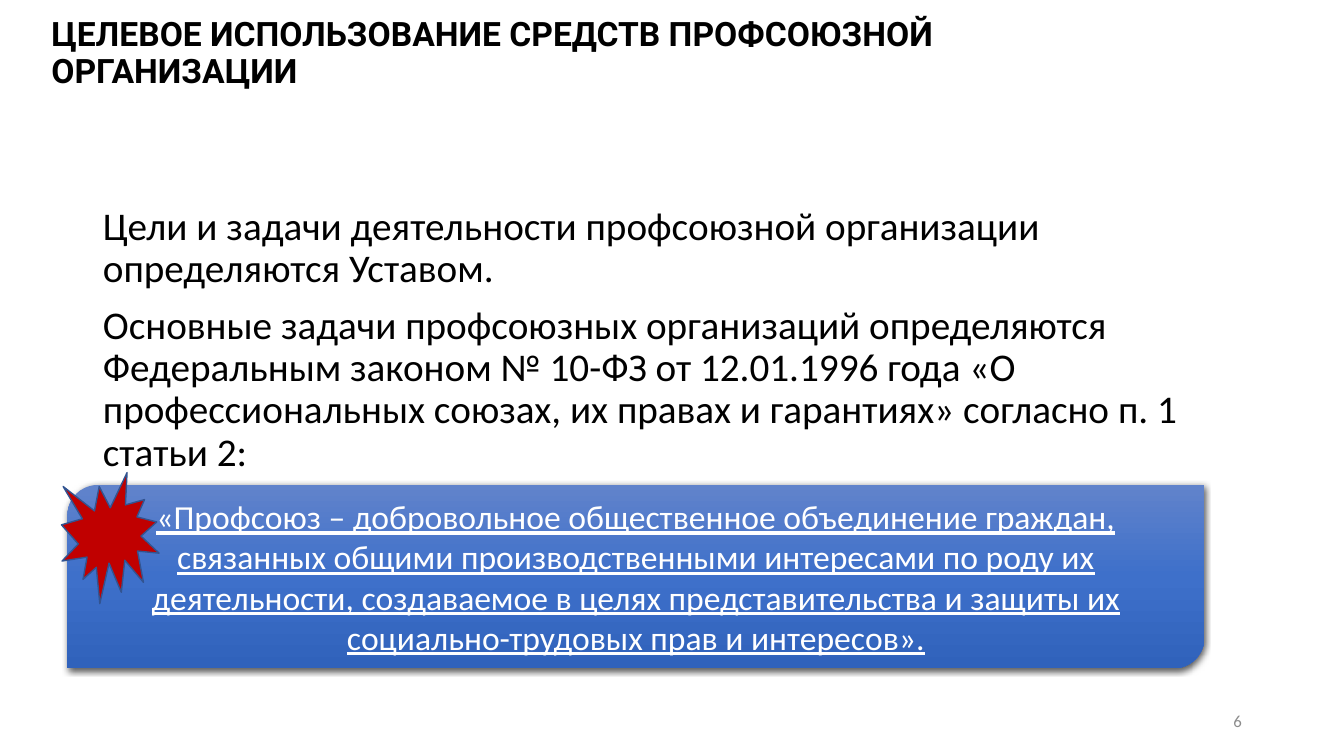
from lxml import etree
from pptx import Presentation
from pptx.dml.color import RGBColor
from pptx.enum.shapes import MSO_SHAPE as Preset
from pptx.enum.text import MSO_ANCHOR as Anchor, MSO_AUTO_SIZE as AutoSize, PP_ALIGN as Align
from pptx.oxml import parse_xml
from pptx.oxml.ns import nsdecls, qn
from pptx.util import Cm, Pt


def color(value):
    return RGBColor.from_string(value)


def write(shape, *texts, size, font="Calibri", ink="000000", bold=False, underline=False,
          align=Align.LEFT, anchor=Anchor.MIDDLE, spacing=1.0, before=0):
    frame = shape.text_frame
    frame.word_wrap = True
    frame.auto_size = AutoSize.NONE
    frame.vertical_anchor = anchor
    for index, text in enumerate(texts):
        paragraph = frame.paragraphs[0] if index == 0 else frame.add_paragraph()
        paragraph.alignment = align
        paragraph.line_spacing = spacing
        paragraph.space_before = Pt(before if index else 0)
        run = paragraph.add_run()
        run.text = text
        run.font.size = Pt(size)
        run.font.name = font
        run.font.bold = bold
        run.font.underline = underline
        run.font.color.rgb = color(ink)


presentation = Presentation()
presentation.slide_width, presentation.slide_height = Cm(33.87), Cm(19.05)
slide = presentation.slides.add_slide(presentation.slide_layouts[1])
title, body = slide.placeholders

# Title
title.left, title.top, title.width, title.height = Cm(1.04), Cm(0.51), Cm(24.54), Cm(1.7)
write(title, "ЦЕЛЕВОЕ ИСПОЛЬЗОВАНИЕ СРЕДСТВ ПРОФСОЮЗНОЙ ОРГАНИЗАЦИИ",
      size=24, font="Roboto", bold=True, spacing=0.9)

# Body text without bullets
body.left, body.top, body.width, body.height = Cm(2.34), Cm(5.08), Cm(29.21), Cm(12.09)
write(body,
      "Цели и задачи деятельности профсоюзной организации определяются Уставом.",
      "Основные задачи профсоюзных организаций определяются Федеральным законом "
      "№ 10-ФЗ от 12.01.1996 года «О профессиональных союзах, их правах и гарантиях» "
      "согласно п. 1 статьи 2:",
      size=28, anchor=Anchor.TOP, spacing=0.9, before=10)
for paragraph in body.text_frame.paragraphs:
    properties = paragraph._p.get_or_add_pPr()
    properties.set("marL", "0")
    properties.set("indent", "0")
    etree.SubElement(properties, qn("a:buNone"))

# Quotation panel with a vertical gradient
panel = slide.shapes.add_shape(Preset.ROUND_2_DIAG_RECTANGLE,
                               Cm(1.7), Cm(12.22), Cm(28.65), Cm(4.62))
panel.shadow.inherit = False
panel.line.fill.background()
panel.fill.gradient()
panel.fill.gradient_angle = 270
stops = panel._element.spPr.find(qn("a:gradFill")).find(qn("a:gsLst"))
for stop in list(stops):
    stops.remove(stop)
for position, value in ((0, "6183CB"), (50, "3E70CA"), (100, "3062BB")):
    stop = etree.SubElement(stops, qn("a:gs"), pos=str(position * 1000))
    etree.SubElement(stop, qn("a:srgbClr"), val=value)
write(panel, "«Профсоюз – добровольное общественное объединение граждан, связанных общими "
      "производственными интересами по роду их деятельности, создаваемое в целях "
      "представительства и защиты их социально-трудовых прав и интересов».",
      size=24, ink="FFFFFF", underline=True, align=Align.CENTER)

# Soft shadows under the title letters and the panel
title_format = title.text_frame.paragraphs[0].runs[0].font._element
title_effects = parse_xml(f"<a:effectLst {nsdecls('a')}/>")
title_format.find(qn("a:solidFill")).addnext(title_effects)
panel_effects = panel._element.spPr.find(qn("a:effectLst"))
for effects, blur, distance, opacity in ((title_effects, 3, 3, 43), (panel_effects, 4.5, 1.5, 63)):
    effects.append(parse_xml(
        f'<a:outerShdw {nsdecls("a")} blurRad="{Pt(blur)}" dist="{Pt(distance)}" dir="5400000" '
        f'algn="ctr" rotWithShape="0"><a:srgbClr val="000000">'
        f'<a:alpha val="{opacity * 1000}"/></a:srgbClr></a:outerShdw>'))

# Red burst on the panel corner
burst = slide.shapes.add_shape(Preset.EXPLOSION1, Cm(1.55), Cm(11.91), Cm(2.46), Cm(3.3))
burst.shadow.inherit = False
burst.fill.solid()
burst.fill.fore_color.rgb = color("C00000")
burst.line.color.rgb = color("325491")
burst.line.width = Pt(1)

# Slide number
number = slide.shapes.add_textbox(Cm(23.93), Cm(17.65), Cm(7.62), Cm(1.02))
write(number, "6", size=12, ink="8C8C8C", align=Align.RIGHT)

presentation.save("out.pptx")
